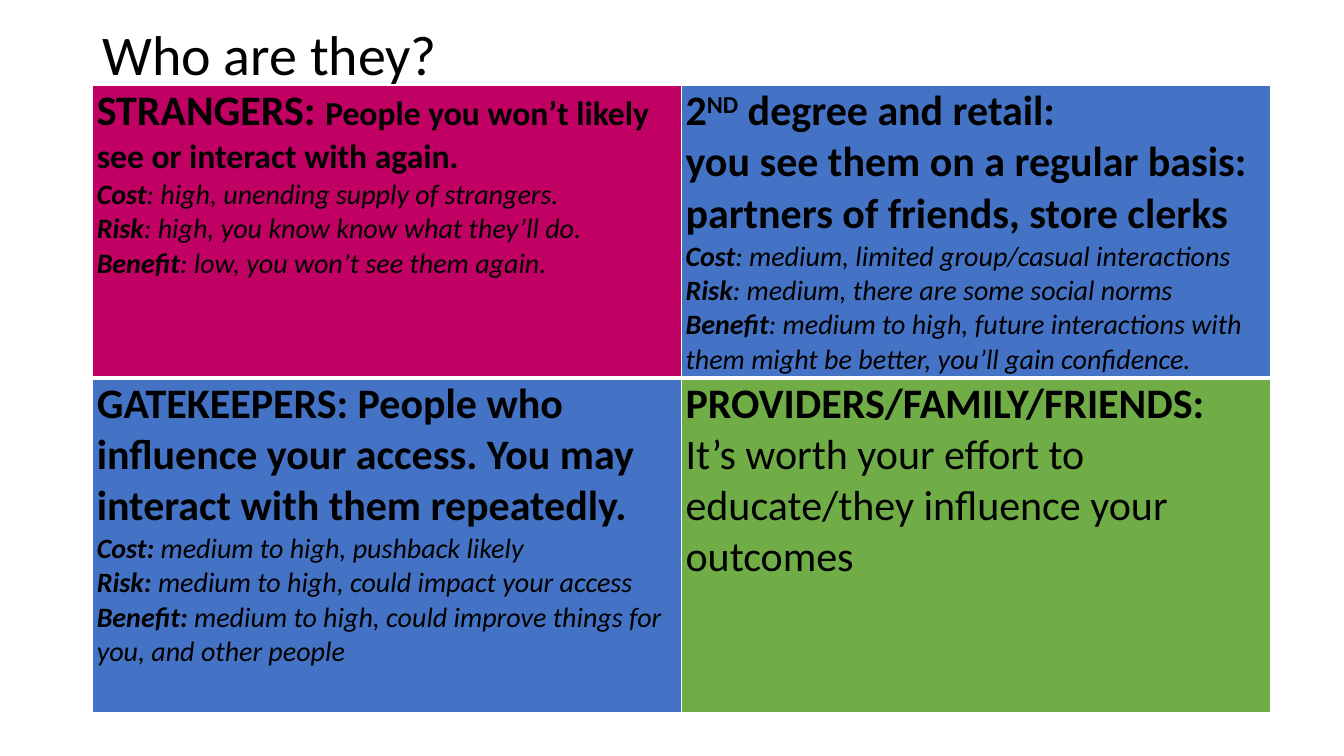
from dataclasses import dataclass

from lxml.etree import SubElement
from pptx import Presentation
from pptx.dml.color import RGBColor
from pptx.enum.text import MSO_ANCHOR
from pptx.oxml.ns import qn
from pptx.slide import Slide
from pptx.table import _Cell
from pptx.text.text import _Paragraph
from pptx.util import Inches, Pt


@dataclass(frozen=True)
class Theme:
    font: str = "Calibri"
    text: str = "000000"
    border: str = "FFFFFF"
    magenta: str = "C00063"
    blue: str = "4472C4"
    green: str = "70AD47"
    title_size: int = 40
    heading_size: int = 30
    subheading_size: int = 24
    detail_size: int = 20
    thin_border: int = 1
    thick_border: int = 3


THEME = Theme()


@dataclass(frozen=True)
class Span:
    text: str
    size: int = THEME.heading_size
    bold: bool = True
    italic: bool = False
    superscript: bool = False


@dataclass(frozen=True)
class Group:
    fill: str
    paragraphs: list[list[Span]]


def detail(label: str, description: str) -> list[Span]:
    return [
        Span(label, THEME.detail_size, italic=True),
        Span(description, THEME.detail_size, bold=False, italic=True),
    ]


GROUPS = [
    [
        Group(THEME.magenta, [
            [
                Span("STRANGERS: "),
                Span("People you won’t likely see or interact with again.", THEME.subheading_size),
            ],
            detail("Cost", ": high, unending supply of strangers."),
            detail("Risk", ": high, you know know what they’ll do."),
            detail("Benefit", ": low, you won’t see them again."),
        ]),
        Group(THEME.blue, [
            [Span("2"), Span("ND", superscript=True), Span(" degree and retail:")],
            [Span("you see them on a regular basis: partners of friends, store clerks")],
            detail("Cost", ": medium, limited group/casual interactions"),
            detail("Risk", ": medium, there are some social norms"),
            detail(
                "Benefit",
                ": medium to high, future interactions with them might be better, "
                "you’ll gain confidence.",
            ),
        ]),
    ],
    [
        Group(THEME.blue, [
            [Span("GATEKEEPERS: People who influence your access. "
                  "You may interact with them repeatedly.")],
            detail("Cost:", " medium to high, pushback likely"),
            detail("Risk: ", "medium to high, could impact your access"),
            detail("Benefit: ", "medium to high, could improve things for you, and other people"),
        ]),
        Group(THEME.green, [
            [Span("PROVIDERS/FAMILY/FRIENDS:")],
            [Span("It’s worth your effort to educate/they influence your outcomes", bold=False)],
        ]),
    ],
]


def write_spans(paragraph: _Paragraph, spans: list[Span]) -> None:
    for span in spans:
        run = paragraph.add_run()
        run.text = span.text
        run.font.name = THEME.font
        run.font.size = Pt(span.size)
        run.font.bold = span.bold
        run.font.italic = span.italic
        run.font.color.rgb = RGBColor.from_string(THEME.text)
        if span.superscript:
            run._r.get_or_add_rPr().set("baseline", "30000")


def set_borders(cell: _Cell, top: int, bottom: int) -> None:
    properties = cell._tc.get_or_add_tcPr()
    widths = {"lnL": THEME.thin_border, "lnR": THEME.thin_border, "lnT": top, "lnB": bottom}
    for edge, width in widths.items():
        line = SubElement(properties, qn(f"a:{edge}"), w=str(Pt(width)))
        fill = SubElement(line, qn("a:solidFill"))
        SubElement(fill, qn("a:srgbClr"), val=THEME.border)


def draw_group(cell: _Cell, group: Group) -> None:
    cell.fill.solid()
    cell.fill.fore_color.rgb = RGBColor.from_string(group.fill)
    cell.margin_left = cell.margin_right = Inches(0.04)
    cell.margin_top = cell.margin_bottom = Inches(0)
    text_frame = cell.text_frame
    for index, spans in enumerate(group.paragraphs):
        paragraph = text_frame.add_paragraph() if index else text_frame.paragraphs[0]
        write_spans(paragraph, spans)


def draw_title(slide: Slide, text: str) -> None:
    title = slide.shapes.add_textbox(Inches(0.92), Inches(0.12), Inches(11.5), Inches(0.9))
    text_frame = title.text_frame
    text_frame.word_wrap = True
    text_frame.vertical_anchor = MSO_ANCHOR.MIDDLE
    paragraph = text_frame.paragraphs[0]
    paragraph.line_spacing = 0.9
    write_spans(paragraph, [Span(text, THEME.title_size, bold=False)])


def draw_table(slide: Slide, groups: list[list[Group]]) -> None:
    table = slide.shapes.add_table(
        len(groups), len(groups[0]), Inches(0.92), Inches(0.85), Inches(11.68), Inches(6.22)
    ).table
    table.first_row = False
    table.horz_banding = False
    for row, height in zip(table.rows, (2.9, 3.32)):
        row.height = Inches(height)
    for row_index, row_groups in enumerate(groups):
        top = THEME.thick_border if row_index else THEME.thin_border
        bottom = THEME.thin_border if row_index else THEME.thick_border
        for column_index, group in enumerate(row_groups):
            cell = table.cell(row_index, column_index)
            set_borders(cell, top, bottom)
            draw_group(cell, group)


def main() -> None:
    presentation = Presentation()
    presentation.slide_width = Inches(13.33)
    presentation.slide_height = Inches(7.5)
    slide = presentation.slides.add_slide(presentation.slide_layouts[6])
    draw_title(slide, "Who are they?")
    draw_table(slide, GROUPS)
    presentation.save("out.pptx")


if __name__ == "__main__":
    main()
